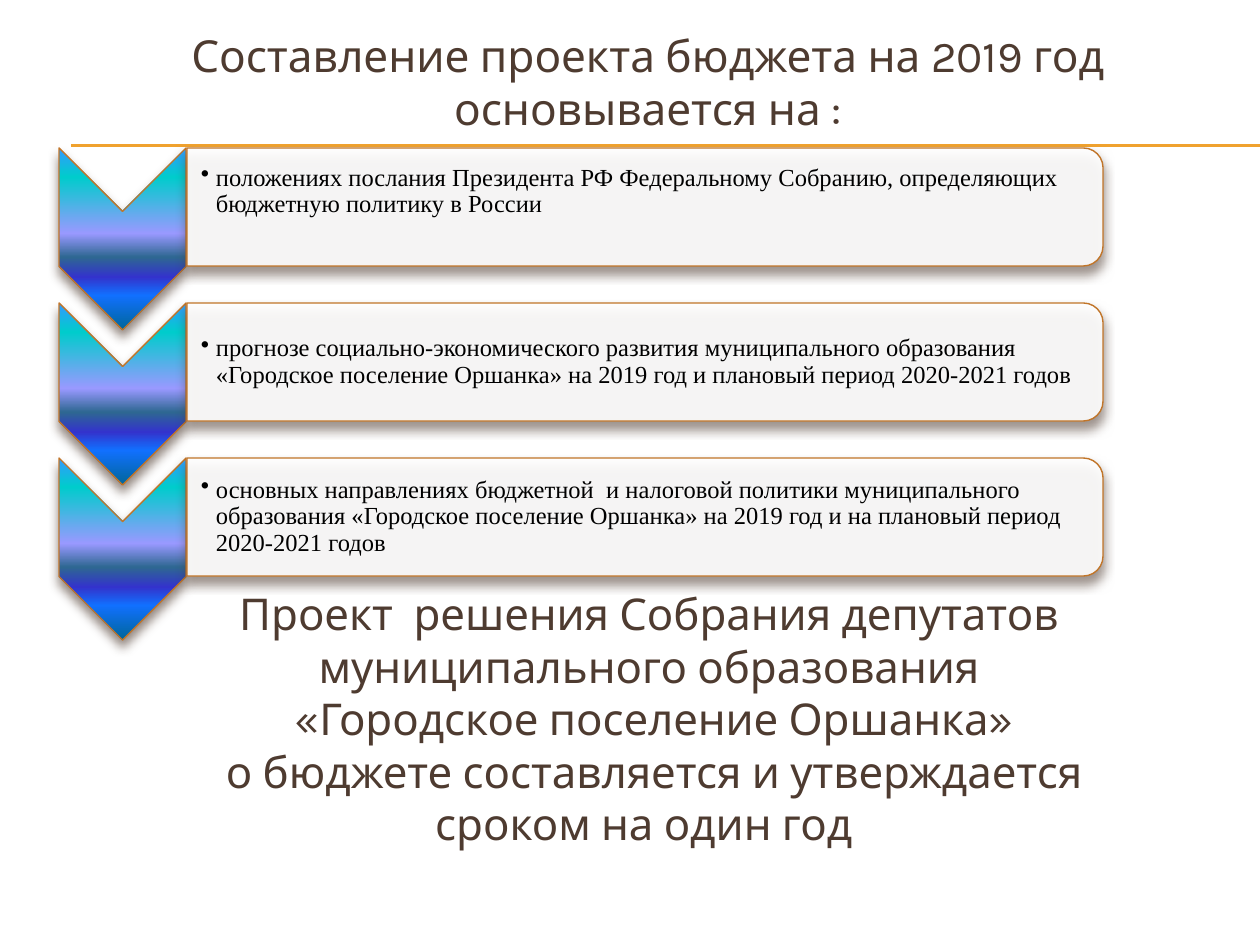
from dataclasses import dataclass

from lxml import etree
from pptx import Presentation
from pptx.dml.color import RGBColor
from pptx.enum.shapes import MSO_CONNECTOR, MSO_SHAPE
from pptx.enum.text import MSO_ANCHOR, MSO_AUTO_SIZE, PP_ALIGN
from pptx.oxml import parse_xml
from pptx.oxml.ns import qn
from pptx.util import Pt

CHEVRON = MSO_SHAPE.CHEVRON
PANEL = MSO_SHAPE.ROUND_2_SAME_RECTANGLE
STRAIGHT = MSO_CONNECTOR.STRAIGHT
MIDDLE, TOP = MSO_ANCHOR.MIDDLE, MSO_ANCHOR.TOP
CENTER, LEFT = PP_ALIGN.CENTER, PP_ALIGN.LEFT
FIT_SHAPE = MSO_AUTO_SIZE.SHAPE_TO_FIT_TEXT
SCALE = 914400 / 126
DRAWING = "http://schemas.openxmlformats.org/drawingml/2006/main"


@dataclass(frozen=True)
class Theme:
    heading_font: str = "Karla"
    body_font: str = "Times New Roman"
    heading: str = "4E3B30"
    body: str = "000000"
    rule: str = "F0A22E"
    outline: str = "C17529"
    panel: str = "FFFFFF"
    title_size: float = 25.2
    closing_size: float = 25
    body_size: float = 14
    chevron_stops: tuple = (
        (0, "3399FF"), (16, "00CCCC"), (47, "9999FF"), (60, "2E6792"),
        (71, "3333CC"), (81, "1170FF"), (100, "006699"),
    )


THEME = Theme()

TITLE = ["Составление проекта бюджета на 2019 год основывается на :"]
GROUNDS = [
    ("положениях послания Президента РФ Федеральному Собранию, "
     "определяющих бюджетную политику в России", 32),
    ("прогнозе социально-экономического развития муниципального образования "
     "«Городское поселение Оршанка» на 2019 год и плановый период 2020-2021 годов", 1),
    ("основных направлениях бюджетной  и налоговой политики муниципального "
     "образования «Городское поселение Оршанка» на 2019 год и на плановый "
     "период 2020-2021 годов", 1),
]
CLOSING = [
    "Проект  решения Собрания депутатов муниципального образования",
    " «Городское поселение Оршанка»",
    " о бюджете составляется и утверждается сроком на один год ",
]

RULE_LEFT, RULE_RIGHT, RULE_TOPS = 71, 1260, (145, 146)
FIRST_TOP, PITCH = 148, 155
CHEVRON_LEFT, CHEVRON_WIDTH, CHEVRON_HEIGHT = 59, 127, 182
PANEL_LEFT, PANEL_WIDTH, PANEL_HEIGHT = 187, 916, 118
TEXT_WIDTH, TEXT_HEIGHT = 910, 107

HEADING_FORMAT = {"name": THEME.heading_font, "size": Pt(THEME.title_size)}
CLOSING_FORMAT = {"name": THEME.heading_font, "size": Pt(THEME.closing_size)}
BODY_FORMAT = {"name": THEME.body_font, "size": Pt(THEME.body_size)}


def px(value):
    return round(value * SCALE)


def set_all(target, values):
    for name, value in values.items():
        setattr(target, name, value)


def add_text(page, area, lines, font, color, frame_format, align=CENTER, bulleted=False):
    box = page.shapes.add_textbox(*map(px, area))
    frame = box.text_frame
    set_all(frame, {"word_wrap": True, **frame_format})
    for index, line in enumerate(lines):
        para = frame.add_paragraph() if index else frame.paragraphs[0]
        para.alignment = align
        if bulleted:
            para.line_spacing = 0.9
            properties = para._p.get_or_add_pPr()
            properties.set("marL", str(px(15)))
            properties.set("indent", str(-px(15)))
            etree.SubElement(properties, qn("a:buChar")).set("char", "•")
        span = para.add_run()
        span.text = line
        set_all(span.font, font)
        span.font.color.rgb = RGBColor.from_string(color)


def add_turned(page, kind, left, top, width, height):
    shape = page.shapes.add_shape(
        kind, px(left + (width - height) / 2), px(top + (height - width) / 2),
        px(height), px(width))
    shape.rotation = 90
    shape.line.color.rgb = RGBColor.from_string(THEME.outline)
    shape.line.width = Pt(0.79)
    shape.shadow.inherit = False
    effects = shape._element.spPr.find(qn("a:effectLst"))
    effects.append(parse_xml(
        f'<a:outerShdw xmlns:a="{DRAWING}" blurRad="{Pt(6)}" dist="{Pt(4)}" '
        f'dir="5400000" rotWithShape="0"><a:srgbClr val="{THEME.heading}">'
        '<a:alpha val="60000"/></a:srgbClr></a:outerShdw>'))
    return shape


def add_chevron(page, top):
    shape = add_turned(page, CHEVRON, CHEVRON_LEFT, top, CHEVRON_WIDTH, CHEVRON_HEIGHT)
    stops = "".join(
        f'<a:gs pos="{place * 1000}"><a:srgbClr val="{color}"/></a:gs>'
        for place, color in THEME.chevron_stops)
    shape.fill.gradient()
    old = shape._element.spPr.find(qn("a:gradFill"))
    old.getparent().replace(old, parse_xml(
        f'<a:gradFill xmlns:a="{DRAWING}" rotWithShape="0"><a:gsLst>{stops}</a:gsLst>'
        '<a:lin ang="5400000" scaled="0"/></a:gradFill>'))


def add_panel(page, top):
    shape = add_turned(page, PANEL, PANEL_LEFT, top, PANEL_WIDTH, PANEL_HEIGHT)
    shape.fill.solid()
    shape.fill.fore_color.rgb = RGBColor.from_string(THEME.panel)
    color = shape._element.spPr.find(qn("a:solidFill"))[0]
    etree.SubElement(color, qn("a:alpha")).set("val", "90000")


def add_rule(page, top):
    rule = page.shapes.add_connector(STRAIGHT, px(RULE_LEFT), px(top), px(RULE_RIGHT), px(top))
    rule.line.color.rgb = RGBColor.from_string(THEME.rule)
    rule.line.width = Pt(0.75)
    etree.SubElement(rule._element.spPr, qn("a:effectLst"))


def main():
    deck = Presentation()
    deck.slide_width, deck.slide_height = px(1260), px(945)
    page = deck.slides.add_slide(deck.slide_layouts[6])
    for top in RULE_TOPS:
        add_rule(page, top)
    add_text(page, (147, 20, 1002, 123), TITLE, HEADING_FORMAT, THEME.heading,
             {"vertical_anchor": MIDDLE})
    for index, (ground, bottom) in enumerate(GROUNDS):
        top = FIRST_TOP + index * PITCH
        add_chevron(page, top)
        add_panel(page, top)
        text_top = top + (PANEL_HEIGHT - TEXT_HEIGHT) / 2
        add_text(page, (PANEL_LEFT, text_top, TEXT_WIDTH, TEXT_HEIGHT), [ground],
                 BODY_FORMAT, THEME.body,
                 {"vertical_anchor": MIDDLE, "margin_left": px(14), "margin_top": px(1),
                  "margin_right": px(1), "margin_bottom": px(bottom)},
                 LEFT, bulleted=True)
    add_text(page, (147, 581, 1004, 277), CLOSING, CLOSING_FORMAT, THEME.heading,
             {"vertical_anchor": TOP, "auto_size": FIT_SHAPE})
    deck.save("out.pptx")


if __name__ == "__main__":
    main()
